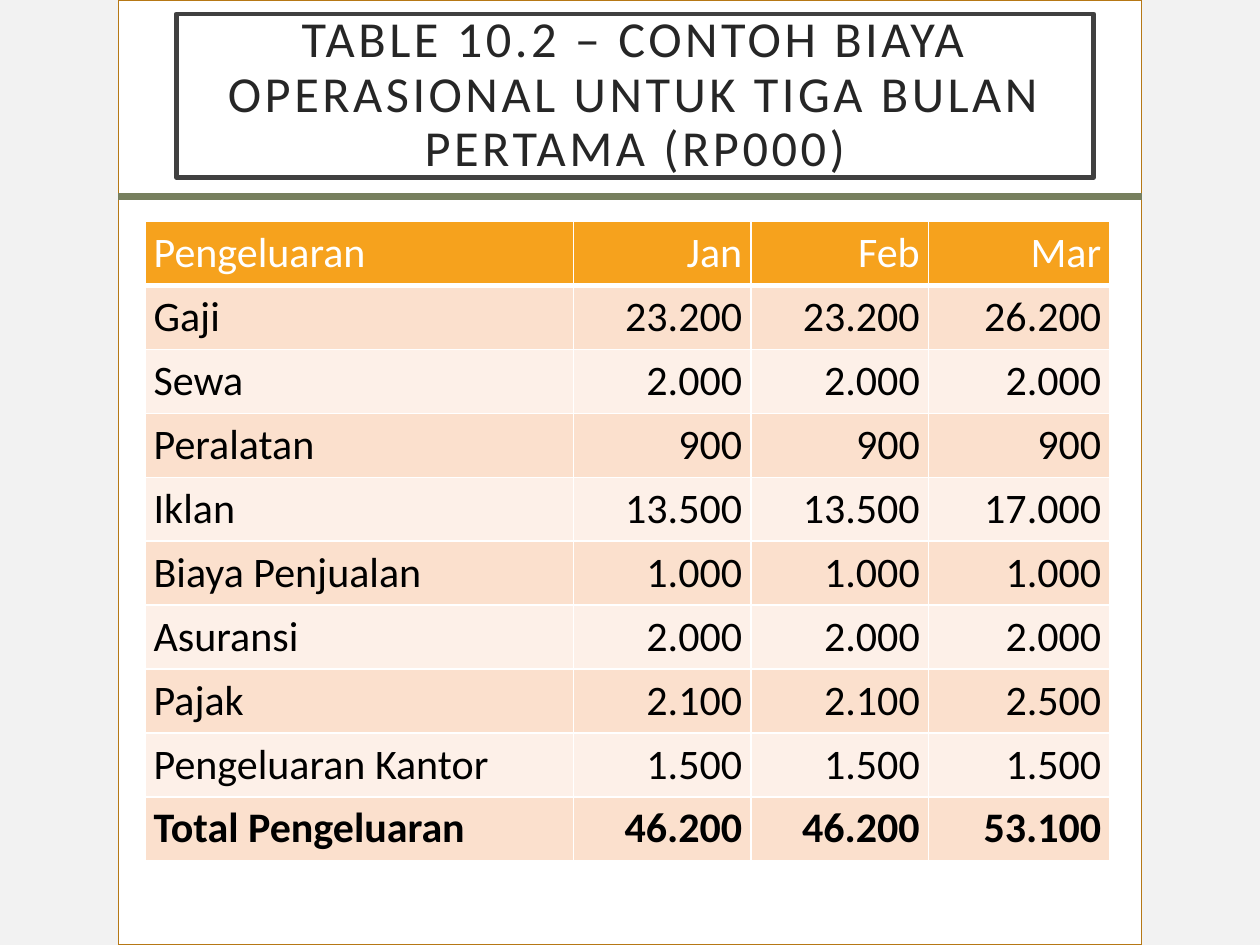
from dataclasses import dataclass

from lxml.etree import SubElement
from pptx import Presentation
from pptx.dml.color import RGBColor
from pptx.enum.shapes import MSO_CONNECTOR, MSO_SHAPE
from pptx.enum.text import MSO_ANCHOR, PP_ALIGN
from pptx.oxml.ns import qn
from pptx.util import Inches, Pt


@dataclass(frozen=True)
class Theme:
    back: str = "F2F2F2"
    white: str = "FFFFFF"
    edge: str = "B67815"
    rule: str = "777F5E"
    frame: str = "404040"
    title: str = "262626"
    head: str = "F6A21D"
    bands: tuple = ("FBE0CD", "FDF0E8")
    body: str = "000000"
    font: str = "Calibri"
    big: float = 28.8
    text: float = 24


THEME = Theme()
TITLE = "TABLE 10.2 – CONTOH BIAYA OPERASIONAL UNTUK TIGA BULAN PERTAMA (RP000)"
COSTS = [
    ("Pengeluaran", "Jan", "Feb", "Mar"),
    ("Gaji", "23.200", "23.200", "26.200"),
    ("Sewa", "2.000", "2.000", "2.000"),
    ("Peralatan", "900", "900", "900"),
    ("Iklan", "13.500", "13.500", "17.000"),
    ("Biaya Penjualan", "1.000", "1.000", "1.000"),
    ("Asuransi", "2.000", "2.000", "2.000"),
    ("Pajak", "2.100", "2.100", "2.500"),
    ("Pengeluaran Kantor", "1.500", "1.500", "1.500"),
    ("Total Pengeluaran", "46.200", "46.200", "53.100"),
]
WIDTHS = (3.4, 1.41, 1.41, 1.44)


def paint(fill, color):
    fill.solid()
    fill.fore_color.rgb = RGBColor.from_string(color)


def apply(item, values):
    for name, value in values.items():
        setattr(item, name, value)


def write(para, text, color, size, align, bold=False):
    para.alignment = align
    run = para.add_run()
    run.text = text
    apply(run.font, {"name": THEME.font, "size": Pt(size), "bold": bold})
    run.font.color.rgb = RGBColor.from_string(color)
    return run


def add_panel(slide, box, edge, width):
    panel = slide.shapes.add_shape(MSO_SHAPE.RECTANGLE, *map(Inches, box))
    panel.shadow.inherit = False
    paint(panel.fill, THEME.white)
    paint(panel.line.fill, edge)
    panel.line.width = Pt(width)
    return panel


def add_page(slide, box, drop):
    """White page with a rule across it, drop inches below its top."""
    left, top, width, _ = box
    add_panel(slide, box, THEME.edge, 1)
    ends = (left, top + drop, left + width, top + drop)
    rule = slide.shapes.add_connector(MSO_CONNECTOR.STRAIGHT, *map(Inches, ends))
    paint(rule.line.fill, THEME.rule)
    rule.line.width = Pt(4.5)
    SubElement(rule._element.spPr, qn("a:effectLst"))


def add_title(slide, box):
    frame = add_panel(slide, box, THEME.frame, 2.5).text_frame
    apply(frame, {
        "word_wrap": True,
        "vertical_anchor": MSO_ANCHOR.MIDDLE,
        **{f"margin_{side}": Inches(0.2) for side in ("left", "top", "right", "bottom")},
    })
    para = frame.paragraphs[0]
    para.line_spacing = 0.9
    run = write(para, TITLE, THEME.title, THEME.big, PP_ALIGN.CENTER)
    run.font._element.set("spc", "200")


def add_borders(cell, base):
    """White lines on all sides; base is the weight of the bottom one."""
    props = cell._tc.get_or_add_tcPr()
    for side, width in {"L": 1, "R": 1, "T": 1, "B": base}.items():
        line = SubElement(props, qn(f"a:ln{side}"), w=str(Pt(width)))
        fill = SubElement(line, qn("a:solidFill"))
        SubElement(fill, qn("a:srgbClr"), val=THEME.white)


def add_costs(slide, box):
    shape = slide.shapes.add_table(len(COSTS), len(WIDTHS), *map(Inches, box))
    table = shape.table
    for col, width in zip(table.columns, WIDTHS):
        col.width = Inches(width)
    for r, row in enumerate(COSTS):
        head, total = r == 0, r == len(COSTS) - 1
        table.rows[r].height = Inches(box[3] / len(COSTS))
        for c, text in enumerate(row):
            cell = table.cell(r, c)
            apply(cell, {
                "margin_left": Inches(0.07), "margin_right": Inches(0.07),
                "margin_top": Inches(0.05), "margin_bottom": Inches(0.05),
            })
            add_borders(cell, 3 if head else 1)
            paint(cell.fill, THEME.head if head else THEME.bands[(r - 1) % 2])
            write(cell.text_frame.paragraphs[0], text,
                  THEME.white if head else THEME.body, THEME.text,
                  PP_ALIGN.RIGHT if c else PP_ALIGN.LEFT, total)


def main():
    deck = Presentation()
    apply(deck, {"slide_width": Inches(10), "slide_height": Inches(7.5)})
    slide = deck.slides.add_slide(deck.slide_layouts[6])
    paint(slide.background.fill, THEME.back)

    # Page and rule, then title, then cost table
    add_page(slide, (0.94, 0, 8.12, 7.5), 1.56)
    add_title(slide, (1.4, 0.11, 7.28, 1.3))
    add_costs(slide, (1.15, 1.76, sum(WIDTHS), 5))
    deck.save("out.pptx")


if __name__ == "__main__":
    main()
